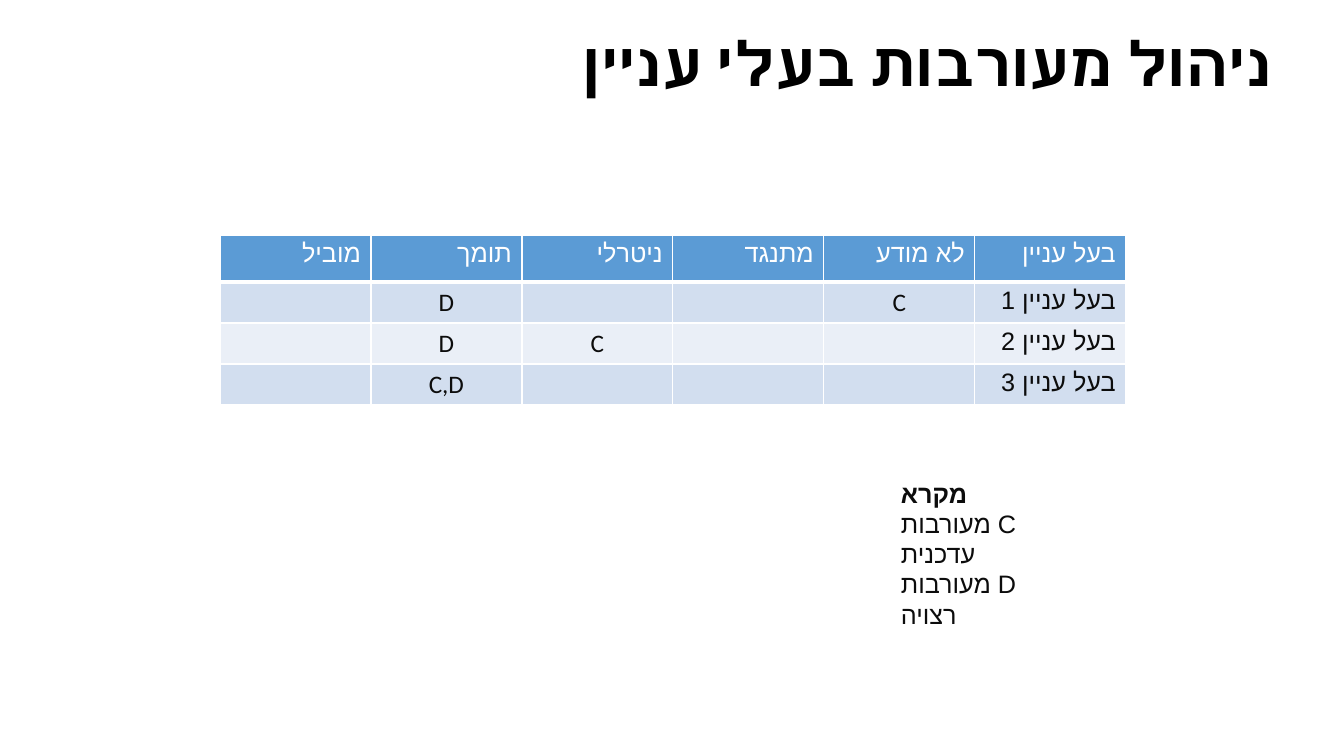
from lxml import etree
from pptx import Presentation
from pptx.dml.color import RGBColor
from pptx.enum.text import MSO_ANCHOR, PP_ALIGN
from pptx.oxml.ns import qn
from pptx.util import Emu, Pt

LEFT, CENTER, RIGHT = PP_ALIGN.LEFT, PP_ALIGN.CENTER, PP_ALIGN.RIGHT
MIDDLE = MSO_ANCHOR.MIDDLE
PX = 9071
THEME = {
    "black": "000000", "white": "FFFFFF", "ink": "0C0C0C",
    "header": "5B9BD5", "bands": ("D2DEEF", "EAEFF7"),
    "latin": "Calibri", "hebrew": "Arial",
    "title_size": 44, "body_size": 18,
}


def px(*lengths):
    return [Emu(length * PX) for length in lengths]


def write(para, text, align, size, color, latin, hebrew, bold=False):
    para.alignment = align
    para._p.get_or_add_pPr().set("rtl", "1")
    span = para.add_run()
    span.text = text
    span.font.size = Pt(size)
    span.font.bold = bold
    span.font.name = latin
    span.font.color.rgb = RGBColor.from_string(color)
    etree.SubElement(span._r.get_or_add_rPr(), qn("a:cs"), typeface=hebrew)


deck = Presentation()
deck.slide_width, deck.slide_height = px(1344, 756)
page = deck.slides.add_slide(deck.slide_layouts[5])

title = page.shapes.title
title.left, title.top, title.width, title.height = px(354, 25, 929, 84)
title.text_frame.vertical_anchor = MIDDLE
title.text_frame.word_wrap = True
title_para = title.text_frame.paragraphs[0]
title_para.line_spacing = 0.9
write(title_para, "ניהול מעורבות בעלי עניין", RIGHT, THEME["title_size"],
      THEME["black"], THEME["latin"], THEME["latin"], True)

rows = [
    ["מוביל", "תומך", "ניטרלי", "מתנגד", "לא מודע", "בעל עניין"],
    ["", "D", "", "", "C", "בעל עניין 1"],
    ["", "D", "C", "", "", "בעל עניין 2"],
    ["", "C,D", "", "", "", "בעל עניין 3"],
]
row_heights = px(47, 41, 41, 41)
column_width = px(151)[0]
last_column = len(rows[0]) - 1
table = page.shapes.add_table(len(rows), len(rows[0]), *px(220, 235, 906, 170)).table
for column in table.columns:
    column.width = column_width

for row_index, words in enumerate(rows):
    table.rows[row_index].height = row_heights[row_index]
    is_header = row_index == 0
    fill = THEME["header"] if is_header else THEME["bands"][(row_index - 1) % 2]
    color = THEME["white"] if is_header else THEME["ink"]
    for column_index, word in enumerate(words):
        cell = table.cell(row_index, column_index)
        properties = cell._tc.get_or_add_tcPr()
        for side in ("lnL", "lnR", "lnT", "lnB"):
            width = Pt(3 if is_header and side == "lnB" else 1)
            line = etree.SubElement(properties, qn(f"a:{side}"), w=str(width))
            solid = etree.SubElement(line, qn("a:solidFill"))
            etree.SubElement(solid, qn("a:srgbClr"), val=THEME["white"])
        cell.fill.solid()
        cell.fill.fore_color.rgb = RGBColor.from_string(fill)
        if word:
            align = RIGHT if is_header or column_index == last_column else CENTER
            write(cell.text_frame.paragraphs[0], word, align, THEME["body_size"],
                  color, THEME["latin"], THEME["hebrew"])

legend = page.shapes.add_textbox(*px(891, 473, 193, 132)).text_frame
legend.word_wrap = True
for index, text in enumerate(["מקרא", "C מעורבות עדכנית", "D מעורבות רצויה"]):
    para = legend.add_paragraph() if index else legend.paragraphs[0]
    write(para, text, LEFT, THEME["body_size"], THEME["ink"],
          THEME["hebrew"], THEME["hebrew"], index == 0)

deck.save("out.pptx")
